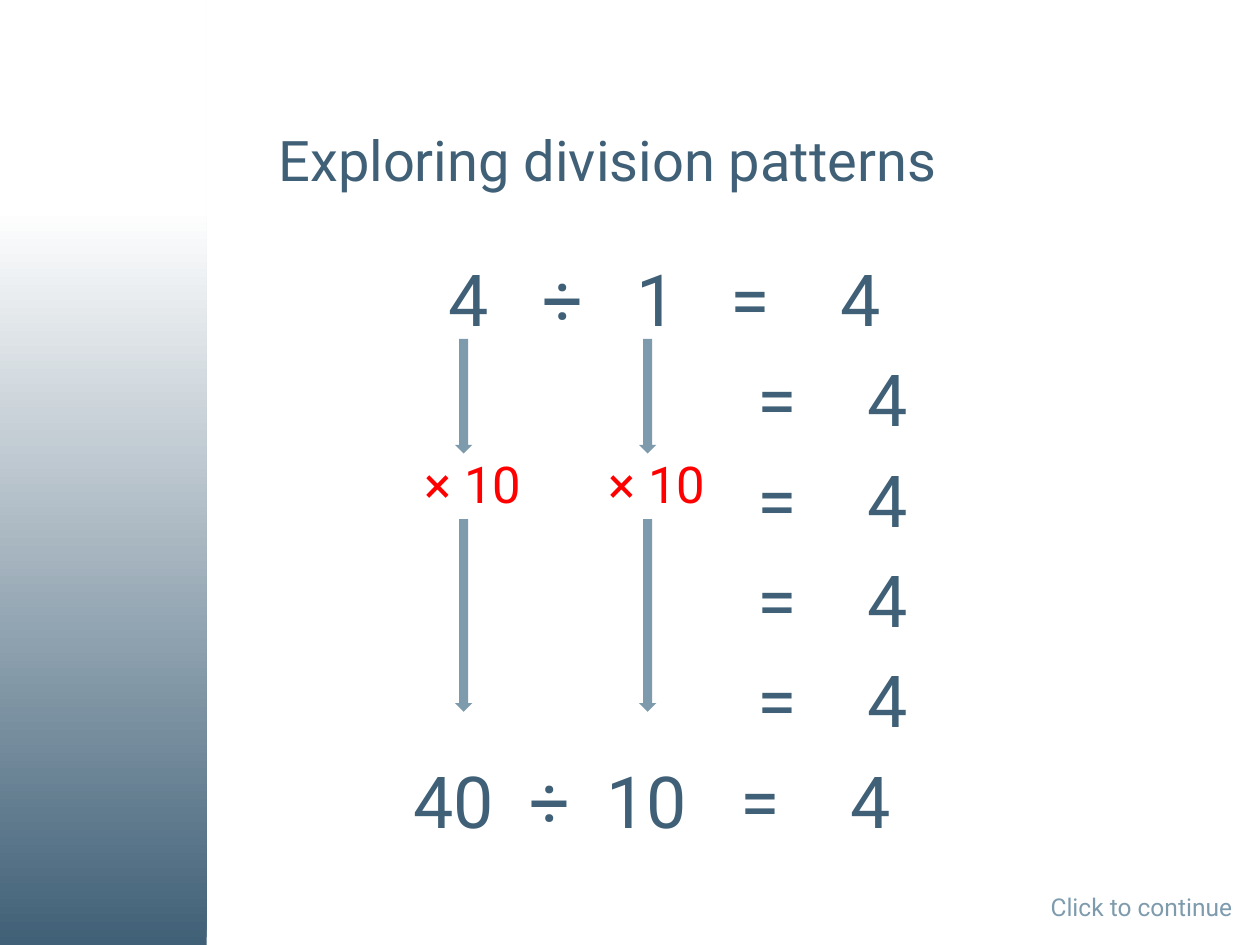
from dataclasses import dataclass

from pptx import Presentation
from pptx.dml.color import RGBColor
from pptx.enum.shapes import MSO_SHAPE
from pptx.enum.text import MSO_ANCHOR, MSO_AUTO_SIZE, PP_ALIGN
from pptx.util import Emu, Inches, Pt

RECTANGLE = MSO_SHAPE.RECTANGLE
DOWN_ARROW = MSO_SHAPE.DOWN_ARROW
LEFT, RIGHT = PP_ALIGN.LEFT, PP_ALIGN.RIGHT
TOP, MIDDLE = MSO_ANCHOR.TOP, MSO_ANCHOR.MIDDLE
FIXED_SIZE = MSO_AUTO_SIZE.NONE

SLIDE_WIDTH, SLIDE_HEIGHT = Inches(10), Inches(7.5)
COLUMNS, ROWS = 100, 75


@dataclass(frozen=True)
class Theme:
    font: str = "Roboto"
    dark: RGBColor = RGBColor(0x40, 0x60, 0x77)
    light: RGBColor = RGBColor(0x7D, 0x9B, 0xAD)
    accent: RGBColor = RGBColor(0xFF, 0x00, 0x00)
    paper: RGBColor = RGBColor(0xFF, 0xFF, 0xFF)
    title_size: float = 32
    equation_size: float = 41
    factor_size: float = 29
    prompt_size: float = 14
    equation_gap: float = 8.2
    space_width: float = 10.15


@dataclass(frozen=True)
class Area:
    column: float
    row: float
    columns: float
    rows: float

    def place(self) -> tuple[Emu, Emu, Emu, Emu]:
        across, down = SLIDE_WIDTH / COLUMNS, SLIDE_HEIGHT / ROWS
        return (Emu(round(self.column * across)), Emu(round(self.row * down)),
                Emu(round(self.columns * across)), Emu(round(self.rows * down)))


@dataclass(frozen=True)
class Equation:
    indent: float
    terms: tuple[str, ...]
    gaps: tuple[int, ...]


THEME = Theme()
QUOTIENT = Equation(27.3, ("=", "4"), (4,))
EQUATIONS = (
    Equation(2.8, ("4", "÷", "1", "=", "4"), (3, 3, 3, 4)),
    *[QUOTIENT] * 4,
    Equation(0, ("40", "÷", "10", "=", "4"), (2, 2, 3, 4)),
)
FACTOR_COLUMNS = (36.1, 50.7)
ARROW_SPANS = ((26.9, 9.1), (41.2, 15.3))


def move(placeholder, area: Area) -> None:
    (placeholder.left, placeholder.top,
     placeholder.width, placeholder.height) = area.place()


def prepare(frame, anchor: MSO_ANCHOR) -> None:
    frame.word_wrap = True
    frame.auto_size = FIXED_SIZE
    frame.vertical_anchor = anchor


def write(paragraph, text: str, size: float, colour: RGBColor,
          alignment: PP_ALIGN = LEFT, tracking: float = 0) -> None:
    paragraph.alignment = alignment
    run = paragraph.add_run()
    run.text = text
    run.font.name = THEME.font
    run.font.size = Pt(size)
    run.font.color.rgb = colour
    if tracking:
        run._r.get_or_add_rPr().set("spc", str(round(tracking * 100)))


def add_label(shapes, area: Area, text: str, size: float, colour: RGBColor,
              alignment: PP_ALIGN = LEFT) -> None:
    frame = shapes.add_textbox(*area.place()).text_frame
    prepare(frame, TOP)
    write(frame.paragraphs[0], text, size, colour, alignment)


def add_sidebar(slide) -> None:
    sidebar = slide.shapes.add_shape(RECTANGLE, *Area(0, 0, 16.4, ROWS).place())
    sidebar.shadow.inherit = False
    sidebar.line.fill.background()
    sidebar.fill.gradient()
    sidebar.fill.gradient_angle = 90
    stops = ((0, THEME.dark), (0.78, THEME.paper))
    for stop, (position, colour) in zip(sidebar.fill.gradient_stops, stops):
        stop.position = position
        stop.color.rgb = colour


def write_equation(paragraph, equation: Equation) -> None:
    properties = paragraph._p.get_or_add_pPr()
    properties.set("marL", str(round(equation.indent * SLIDE_WIDTH / COLUMNS)))
    properties.set("indent", "0")
    size, colour = THEME.equation_size, THEME.dark
    first, *others = equation.terms
    write(paragraph, first, size, colour)
    for gap, term in zip(equation.gaps, others):
        write(paragraph, " ", size, colour, tracking=(gap - 1) * THEME.space_width)
        write(paragraph, term, size, colour)


def write_equations(frame) -> None:
    prepare(frame, TOP)
    for index, equation in enumerate(EQUATIONS):
        paragraph = frame.add_paragraph() if index else frame.paragraphs[0]
        paragraph.space_before = Pt(THEME.equation_gap if index else 0)
        write_equation(paragraph, equation)


def add_factor(slide, column: float) -> None:
    factor = slide.shapes.add_group_shape()
    for row, rows in ARROW_SPANS:
        arrow = factor.shapes.add_shape(DOWN_ARROW, *Area(column, row, 1.4, rows).place())
        arrow.shadow.inherit = False
        arrow.fill.solid()
        arrow.fill.fore_color.rgb = THEME.light
        arrow.line.fill.background()
    add_label(factor.shapes, Area(column - 3.4, 35.4, 11.8, 5.9), "× 10",
              THEME.factor_size, THEME.accent)


def main() -> None:
    presentation = Presentation()
    presentation.slide_width = SLIDE_WIDTH
    presentation.slide_height = SLIDE_HEIGHT
    slide = presentation.slides.add_slide(presentation.slide_layouts[0])
    title, equations = slide.placeholders

    add_sidebar(slide)
    move(title, Area(21.1, 8.6, 75, 8))
    prepare(title.text_frame, MIDDLE)
    write(title.text_frame.paragraphs[0], "Exploring division patterns",
          THEME.title_size, THEME.dark)
    move(equations, Area(31.8, 19.7, 65, 50))
    write_equations(equations.text_frame)
    add_label(slide.shapes, Area(80.5, 70.3, 18.3, 3.4), "Click to continue",
              THEME.prompt_size, THEME.light, RIGHT)
    for column in FACTOR_COLUMNS:
        add_factor(slide, column)

    presentation.save("out.pptx")


if __name__ == "__main__":
    main()
